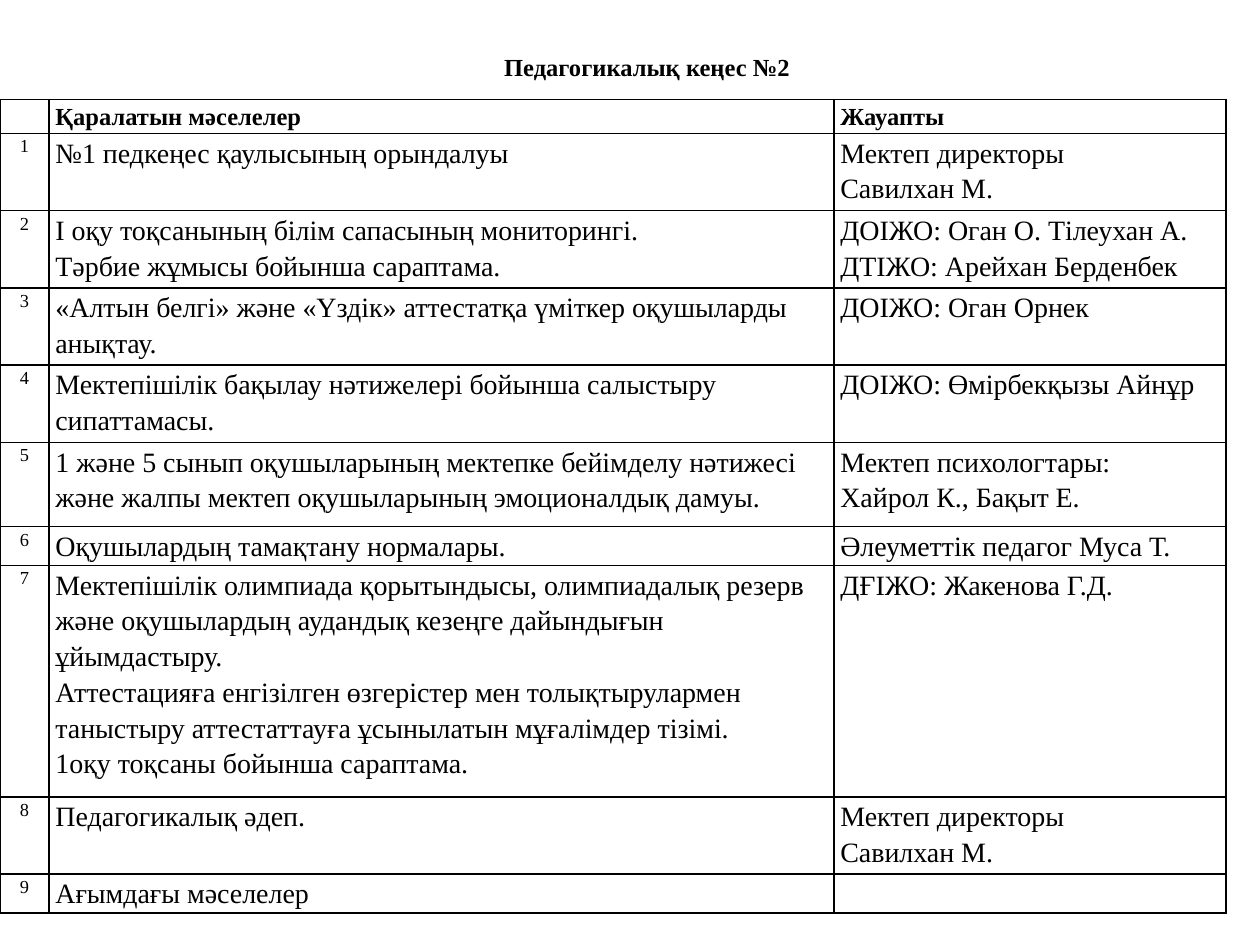
from dataclasses import dataclass

from lxml import etree
from pptx import Presentation
from pptx.dml.color import RGBColor
from pptx.enum.text import MSO_ANCHOR, MSO_AUTO_SIZE, PP_ALIGN
from pptx.oxml.ns import qn
from pptx.util import Inches, Pt

LEFT, CENTER = PP_ALIGN.LEFT, PP_ALIGN.CENTER
MIDDLE = MSO_ANCHOR.MIDDLE
GROW = MSO_AUTO_SIZE.SHAPE_TO_FIT_TEXT


@dataclass(frozen=True)
class Theme:
    font: str = "Times New Roman"
    ink: str = "000000"
    heading: float = 14
    body: float = 16
    number: float = 10.5
    line_spacing: float = 1.15
    border: float = 1


@dataclass(frozen=True)
class AgendaItem:
    topic: str
    responsible: str
    height: float = 0.6


THEME = Theme()
HEADER_HEIGHT = 0.26
COLUMNS = (0.39, 6.23, 3.11)
HEADERS = ("", "Қаралатын мәселелер", "Жауапты")
DIRECTOR = "Мектеп директоры\nСавилхан М."
AGENDA = (
    AgendaItem("№1 педкеңес қаулысының орындалуы", DIRECTOR),
    AgendaItem("I оқу тоқсанының білім сапасының мониторингі.\n"
               "Тәрбие жұмысы бойынша сараптама.",
               "ДОІЖО: Оган О. Тілеухан А.\nДТІЖО: Арейхан Берденбек"),
    AgendaItem("«Алтын белгі» және «Үздік» аттестатқа үміткер оқушыларды анықтау.",
               "ДОІЖО: Оган Орнек"),
    AgendaItem("Мектепішілік бақылау нәтижелері бойынша салыстыру сипаттамасы.",
               "ДОІЖО: Өмірбекқызы Айнұр"),
    AgendaItem("1 және 5 сынып оқушыларының мектепке бейімделу нәтижесі "
               "және жалпы мектеп оқушыларының эмоционалдық дамуы.",
               "Мектеп психологтары:\nХайрол К., Бақыт Е.", 0.67),
    AgendaItem("Оқушылардың тамақтану нормалары.",
               "Әлеуметтік педагог Муса Т.", 0.3),
    AgendaItem("Мектепішілік олимпиада қорытындысы, олимпиадалық резерв "
               "және оқушылардың аудандық кезеңге дайындығын ұйымдастыру.\n"
               "Аттестацияға енгізілген өзгерістер мен толықтырулармен "
               "таныстыру аттестаттауға ұсынылатын мұғалімдер тізімі.\n"
               "1оқу тоқсаны бойынша сараптама.",
               "ДҒІЖО: Жакенова Г.Д.", 1.56),
    AgendaItem("Педагогикалық әдеп.", DIRECTOR),
    AgendaItem("Ағымдағы мәселелер", "", 0.3),
)


def format_text(tf, size: float, bold: bool, align, spacing: float) -> None:
    for p in tf.paragraphs:
        p.alignment = align
        p.line_spacing = spacing
        for r in p.runs:
            r.font.name = THEME.font
            r.font.size = Pt(size)
            r.font.bold = bold
            r.font.color.rgb = RGBColor.from_string(THEME.ink)
        if not p.runs:  # keeps an empty cell from stretching its row
            etree.SubElement(p._p, qn("a:endParaRPr"), sz=str(int(size * 100)))


def add_borders(cell) -> None:
    tc_pr = cell._tc.get_or_add_tcPr()
    for i, side in enumerate(("lnL", "lnR", "lnT", "lnB")):
        line = etree.Element(qn(f"a:{side}"), w=str(Pt(THEME.border)))
        fill = etree.SubElement(line, qn("a:solidFill"))
        etree.SubElement(fill, qn("a:srgbClr"), val=THEME.ink)
        tc_pr.insert(i, line)


def fill_cell(cell, text: str, size: float, bold: bool = False, align=LEFT) -> None:
    cell.margin_left = cell.margin_right = Inches(0.05)
    cell.margin_top = cell.margin_bottom = 0
    cell.fill.background()
    cell.text_frame.text = text
    format_text(cell.text_frame, size, bold, align, THEME.line_spacing)
    add_borders(cell)


def add_title(slide, text: str) -> None:
    sp = slide.shapes.add_textbox(Inches(3.89), Inches(0.36), Inches(2.49), Inches(0.34))
    tf = sp.text_frame
    tf.word_wrap = False
    tf.auto_size = GROW
    tf.vertical_anchor = MIDDLE
    tf.text = text
    format_text(tf, THEME.heading, True, CENTER, 1.0)


def add_agenda(slide) -> None:
    heights = [HEADER_HEIGHT] + [item.height for item in AGENDA]
    table = slide.shapes.add_table(
        len(heights), len(COLUMNS), 0, Inches(0.79),
        Inches(sum(COLUMNS)), Inches(sum(heights))).table
    table.first_row = table.horz_banding = False
    for column, width in zip(table.columns, COLUMNS):
        column.width = Inches(width)
    for row, height in zip(table.rows, heights):
        row.height = Inches(height)

    # Header row
    for col, text in enumerate(HEADERS):
        fill_cell(table.cell(0, col), text, THEME.heading, bold=True)

    # Numbered agenda rows
    for row, item in enumerate(AGENDA, start=1):
        fill_cell(table.cell(row, 0), str(row), THEME.number, align=CENTER)
        fill_cell(table.cell(row, 1), item.topic, THEME.body)
        fill_cell(table.cell(row, 2), item.responsible, THEME.body)


def main() -> None:
    prs = Presentation()
    prs.slide_width, prs.slide_height = Inches(10), Inches(7.5)
    s = prs.slides.add_slide(prs.slide_layouts[6])
    add_title(s, "Педагогикалық кеңес №2")
    add_agenda(s)
    prs.save("out.pptx")


if __name__ == "__main__":
    main()
